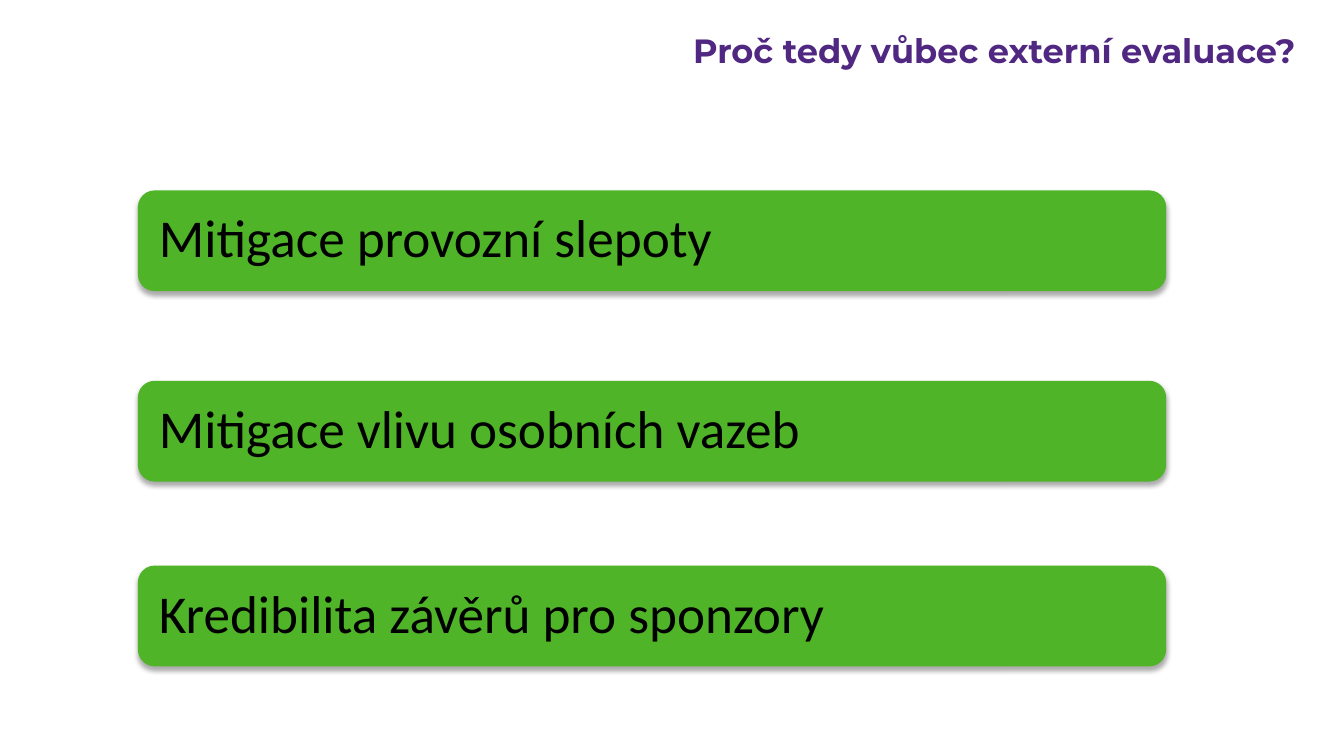
from lxml import etree
from pptx import Presentation
from pptx.dml.color import RGBColor
from pptx.enum.shapes import MSO_SHAPE
from pptx.enum.text import MSO_ANCHOR, MSO_AUTO_SIZE, PP_ALIGN
from pptx.oxml.ns import qn
from pptx.util import Pt

ROUNDED = MSO_SHAPE.ROUNDED_RECTANGLE
MIDDLE = MSO_ANCHOR.MIDDLE
NO_AUTOFIT = MSO_AUTO_SIZE.NONE
LEFT, RIGHT = PP_ALIGN.LEFT, PP_ALIGN.RIGHT
TITLE_ONLY = 5

COLORS = {"title": "502882", "bar": "50B428", "text": "000000", "shadow": "000000"}
TITLE = "Proč tedy vůbec externí evaluace?"
# Each reason with the top of its bar in points
REASONS = [
    ("Mitigace provozní slepoty", 136),
    ("Mitigace vlivu osobních vazeb", 272),
    ("Kredibilita závěrů pro sponzory", 404),
]


def write_line(frame, text, font_name, size, color, align, side_inset, bold=False):
    frame.word_wrap = True
    frame.auto_size = NO_AUTOFIT
    frame.vertical_anchor = MIDDLE
    frame.margin_left = frame.margin_right = Pt(side_inset)
    frame.margin_top = frame.margin_bottom = 0
    paragraph = frame.paragraphs[0]
    paragraph.alignment = align
    paragraph.line_spacing = 0.9
    paragraph.space_before = Pt(0)
    run = paragraph.add_run()
    run.text = text
    run.font.name = font_name
    run.font.size = Pt(size)
    run.font.bold = bold
    run.font.color.rgb = RGBColor.from_string(COLORS[color])


def add_soft_shadow(bar):
    bar.shadow.inherit = False
    effects = bar.element.spPr.find(qn("a:effectLst"))
    shadow = etree.SubElement(
        effects, qn("a:outerShdw"), blurRad=str(Pt(3.5)), dist=str(Pt(2.2)),
        dir="5400000", algn="ctr", rotWithShape="0")
    color = etree.SubElement(shadow, qn("a:srgbClr"), val=COLORS["shadow"])
    etree.SubElement(color, qn("a:alpha"), val="32000")


def place_title(slide, left, top, width, height):
    title = slide.shapes.title
    title.left, title.top = Pt(left), Pt(top)
    title.width, title.height = Pt(width), Pt(height)
    write_line(title.text_frame, TITLE, "Montserrat", 24, "title", RIGHT, 7.2, bold=True)


def add_reason_bar(slide, reason, left, top, width, height):
    bar = slide.shapes.add_shape(ROUNDED, Pt(left), Pt(top), Pt(width), Pt(height))
    bar.fill.solid()
    bar.fill.fore_color.rgb = RGBColor.from_string(COLORS["bar"])
    bar.line.fill.background()
    add_soft_shadow(bar)
    write_line(bar.text_frame, reason, "Calibri", 38, "text", LEFT, 11.5)


def build_reasons_slide(deck):
    slide = deck.slides.add_slide(deck.slide_layouts[TITLE_ONLY])
    place_title(slide, 247.7, 26, 684.7, 23.8)
    for reason, top in REASONS:
        add_reason_bar(slide, reason, 98.5, top, 734.5, 72)


def main():
    deck = Presentation()
    deck.slide_width, deck.slide_height = Pt(960), Pt(540)
    build_reasons_slide(deck)
    deck.save("out.pptx")


if __name__ == "__main__":
    main()
